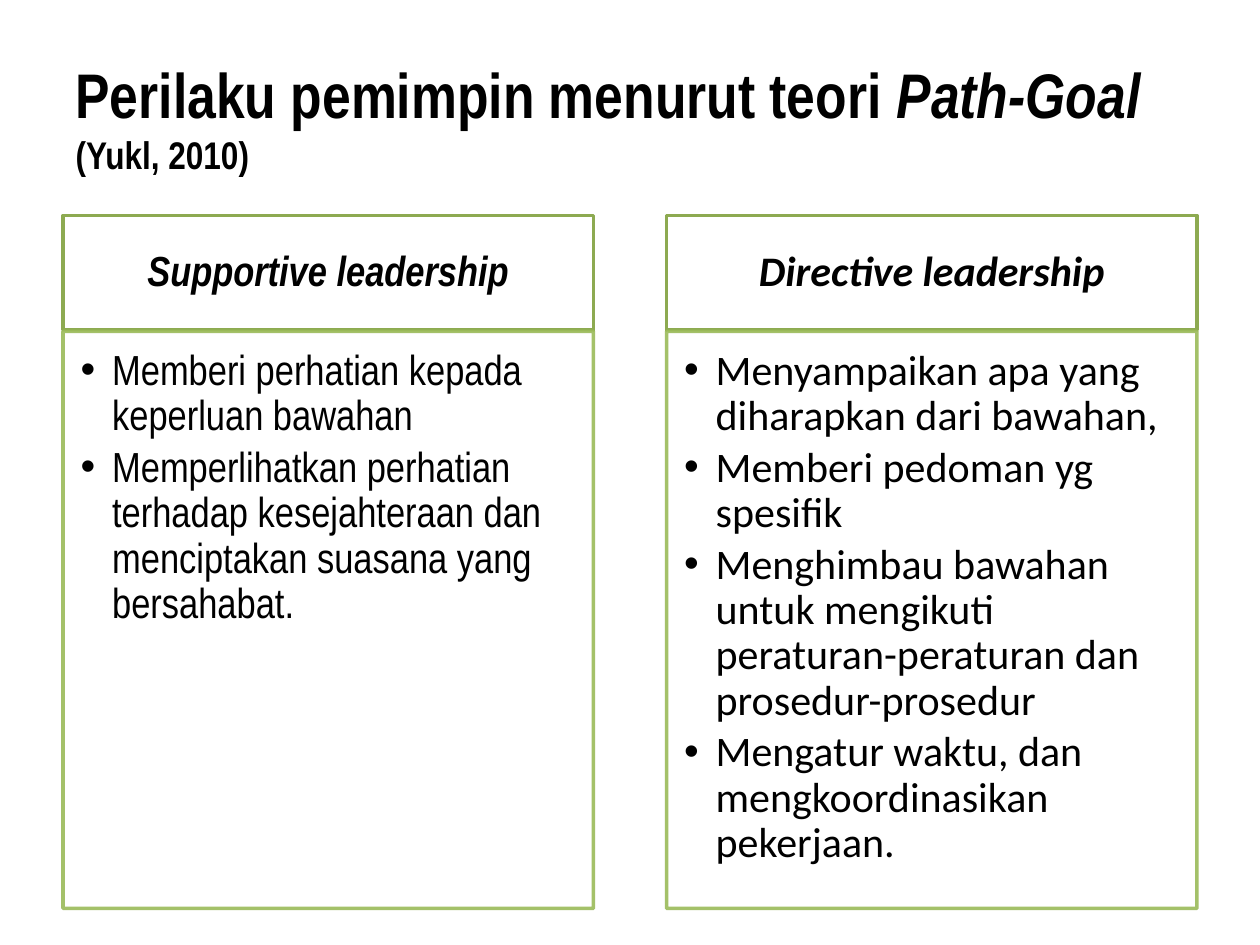
from dataclasses import dataclass

from lxml import etree
from pptx import Presentation
from pptx.dml.color import RGBColor
from pptx.enum.text import MSO_ANCHOR, MSO_AUTO_SIZE, PP_ALIGN
from pptx.oxml.ns import qn
from pptx.util import Inches, Pt

BLACK = RGBColor(0x00, 0x00, 0x00)
WHITE = RGBColor(0xFF, 0xFF, 0xFF)
DARK = RGBColor(0x8D, 0xAA, 0x51)
GREEN = RGBColor(0x9B, 0xBB, 0x59)

LEFT, CENTER = PP_ALIGN.LEFT, PP_ALIGN.CENTER
TOP, MIDDLE = MSO_ANCHOR.TOP, MSO_ANCHOR.MIDDLE
NO_FIT = MSO_AUTO_SIZE.NONE

NARROW, WIDE = "Arial Narrow", "Calibri"
COMPARE = 4  # layout with a title and two headed lists

# Column grid, in inches
EDGE, WIDTH, STEP = 0.5, 4.21, 4.79
HEAD_TOP, HEAD_TALL = 1.71, 0.91
LIST_TOP, LIST_TALL = 2.63, 4.58
INDENT = Inches(0.25)


@dataclass
class Style:
    """Look of one kind of box; insets run left, top, right, bottom."""
    anchor: MSO_ANCHOR
    inset: tuple[float, float, float, float]
    line: RGBColor | None = None
    alpha: int = 100


@dataclass
class Column:
    head: str
    font: str
    items: list[str]


TITLE = Style(MIDDLE, (0.1, 0.05, 0.1, 0.05))
HEAD = Style(MIDDLE, (0.19, 0.11, 0.19, 0.11), DARK)
LIST = Style(TOP, (0.14, 0.14, 0.19, 0.21), GREEN, 90)

COLUMNS = [
    Column("Supportive leadership", NARROW, [
        "Memberi perhatian kepada keperluan bawahan",
        "Memperlihatkan perhatian terhadap kesejahteraan dan "
        "menciptakan suasana yang bersahabat.",
    ]),
    Column("Directive leadership", WIDE, [
        "Menyampaikan apa yang diharapkan dari bawahan,",
        "Memberi pedoman yg spesifik",
        "Menghimbau bawahan untuk mengikuti peraturan-peraturan dan "
        "prosedur-prosedur",
        "Mengatur waktu, dan mengkoordinasikan pekerjaan.",
    ]),
]


def set_box(box, left: float, top: float, width: float, height: float,
            style: Style) -> None:
    """Place a placeholder and give it its frame and margins."""
    box.left, box.top = Inches(left), Inches(top)
    box.width, box.height = Inches(width), Inches(height)
    frame = box.text_frame
    frame.word_wrap = True
    frame.auto_size = NO_FIT
    frame.vertical_anchor = style.anchor
    (frame.margin_left, frame.margin_top,
     frame.margin_right, frame.margin_bottom) = map(Inches, style.inset)
    if style.line is None:
        return
    box.fill.solid()
    box.fill.fore_color.rgb = WHITE
    box.line.color.rgb = style.line
    box.line.width = Pt(2)
    if style.alpha < 100:
        for color in box.fill._xPr.iter(qn("a:srgbClr")):
            etree.SubElement(color, qn("a:alpha"), val=str(style.alpha * 1000))


def add_run(para, text: str, font: str, size: float,
            bold: bool = False, italic: bool = False) -> None:
    run = para.add_run()
    run.text = text
    run.font.name, run.font.size = font, Pt(size)
    run.font.bold, run.font.italic = bold, italic
    run.font.color.rgb = BLACK


def set_para(para, align: PP_ALIGN, after: float = 0,
             pitch: float = 1.0) -> None:
    para.alignment = align
    para.line_spacing = pitch
    para.space_before, para.space_after = Pt(0), Pt(after)


def add_bullet(para) -> None:
    props = para._p.get_or_add_pPr()
    props.set("marL", str(INDENT))
    props.set("indent", str(-INDENT))
    etree.SubElement(props, qn("a:buFont"), typeface="Arial")
    etree.SubElement(props, qn("a:buChar"), char="•")


def draw_title(box) -> None:
    set_box(box, 0.5, 0.3, 9, 1.25, TITLE)
    para = box.text_frame.paragraphs[0]
    set_para(para, LEFT)
    add_run(para, "Perilaku pemimpin menurut teori ", NARROW, 36, True)
    add_run(para, "Path-Goal ", NARROW, 36, True, True)
    add_run(para, "(Yukl, 2010)", NARROW, 22, True)


def draw_column(head, body, left: float, col: Column) -> None:
    # Heading
    set_box(head, left, HEAD_TOP, WIDTH, HEAD_TALL, HEAD)
    para = head.text_frame.paragraphs[0]
    set_para(para, CENTER, 8.4, 0.9)
    add_run(para, col.head, col.font, 24, True, True)

    # Bulleted list
    set_box(body, left, LIST_TOP, WIDTH, LIST_TALL, LIST)
    frame = body.text_frame
    for i, item in enumerate(col.items):
        para = frame.add_paragraph() if i else frame.paragraphs[0]
        set_para(para, LEFT, 3.6, 0.9)
        add_bullet(para)
        add_run(para, item, col.font, 24)


def main() -> None:
    prs = Presentation()
    prs.slide_width, prs.slide_height = Inches(10), Inches(7.5)
    slide = prs.slides.add_slide(prs.slide_layouts[COMPARE])
    holders = slide.placeholders
    draw_title(slide.shapes.title)
    for i, col in enumerate(COLUMNS):
        draw_column(holders[2 * i + 1], holders[2 * i + 2],
                    EDGE + i * STEP, col)
    prs.save("out.pptx")


if __name__ == "__main__":
    main()
